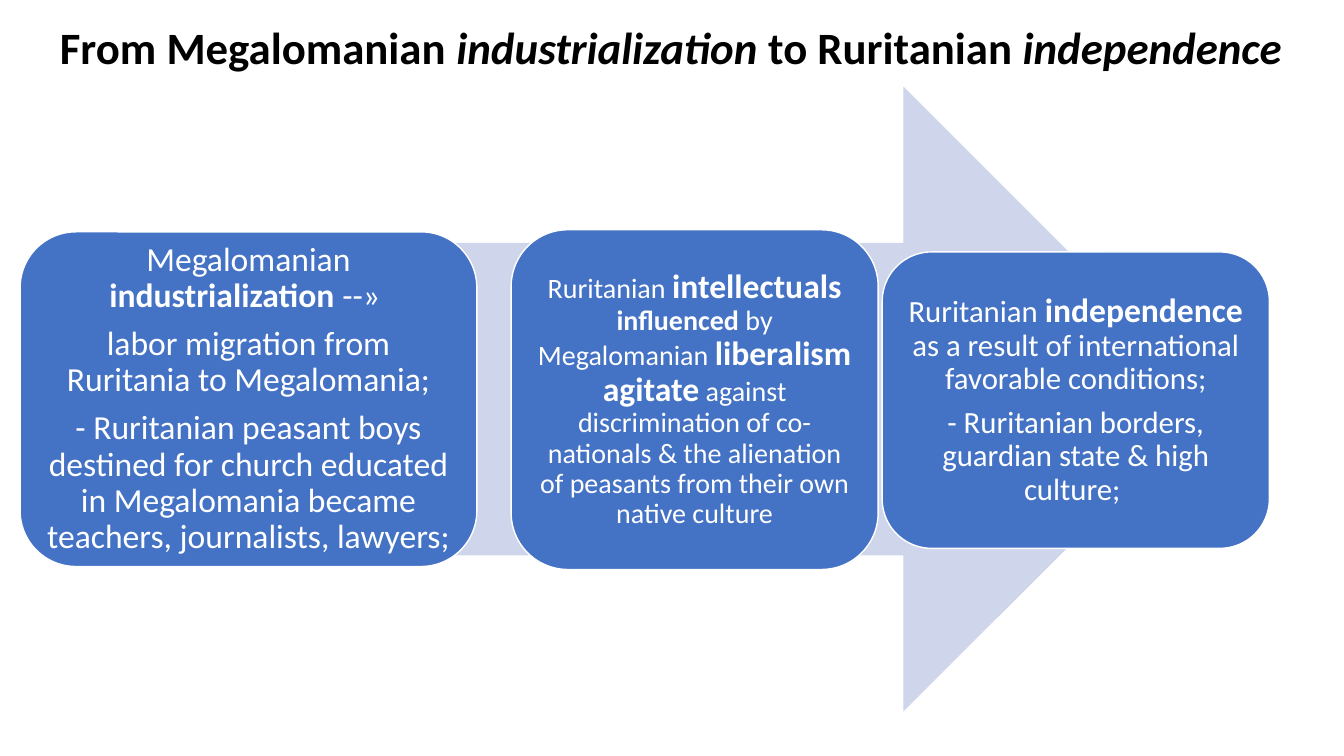
from pptx import Presentation
from pptx.dml.color import RGBColor
from pptx.enum import shapes, text
from pptx.util import Inches, Pt

BLUE, PALE, WHITE, BLACK = "4472C4", "CFD5EA", "FFFFFF", "000000"
FONT = "Calibri"

TITLE = [
    ("From Megalomanian ", 32, "b"),
    ("industrialization", 32, "bi"),
    (" to Ruritanian ", 32, "b"),
    ("independence ", 32, "bi"),
]
STAGES = [
    ((0.2, 2.3, 4.53, 3.32), 0.1, 8.4, [
        [("Megalomanian ", 24, ""), ("industrialization", 24, "b"), (" --» ", 24, "")],
        [("labor migration from Ruritania to Megalomania;", 24, "")],
        [("- Ruritanian peasant boys destined for church educated in "
          "Megalomania became teachers, journalists, lawyers;", 24, "")],
    ]),
    ((5.07, 2.28, 3.64, 3.37), 0.08, 7, [
        [("Ruritanian ", 20, ""), ("intellectuals", 24, "b"), (" ", 20, ""),
         ("influenced", 20, "b"), (" by Megalomanian ", 20, ""),
         ("liberalism", 24, "b"), (" ", 20, ""), ("agitate", 24, "b"),
         (" against discrimination of co-nationals & the alienation of "
          "peasants from their own native culture", 20, "")],
    ]),
    ((8.75, 2.5, 3.84, 2.94), 0.09, 7.7, [
        [("Ruritanian ", 22, ""), ("independence", 24, "b"),
         (" as a result of international favorable conditions;", 22, "")],
        [("- Ruritanian borders, guardian state & high culture; ", 22, "")],
    ]),
]


def rgb(value):
    return RGBColor.from_string(value)


def write(tf, paragraphs, color, after=0):
    tf.word_wrap = True
    tf.vertical_anchor = text.MSO_ANCHOR.MIDDLE
    for i, runs in enumerate(paragraphs):
        p = tf.add_paragraph() if i else tf.paragraphs[0]
        p.alignment = text.PP_ALIGN.CENTER
        p.line_spacing = 0.9
        p.space_after = Pt(after)
        for words, size, style in runs:
            r = p.add_run()
            r.text = words
            r.font.name = FONT
            r.font.size = Pt(size)
            r.font.bold = "b" in style
            r.font.italic = "i" in style
            r.font.color.rgb = rgb(color)


def add_block(s, kind, box, fill):
    sp = s.shapes.add_shape(kind, *map(Inches, box))
    sp.shadow.inherit = False
    sp.fill.solid()
    sp.fill.fore_color.rgb = rgb(fill)
    return sp


def main():
    prs = Presentation()
    prs.slide_width, prs.slide_height = Inches(13.33), Inches(7.5)
    s = prs.slides.add_slide(prs.slide_layouts[5])

    title = s.shapes.title
    title.left, title.top, title.width, title.height = map(Inches, (0.2, 0, 13.01, 1))
    write(title.text_frame, [TITLE], BLACK)

    arrow = add_block(s, shapes.MSO_SHAPE.RIGHT_ARROW, (1.28, 0.86, 10.78, 6.2), PALE)
    arrow.line.fill.background()

    for box, inset, after, paragraphs in STAGES:
        sp = add_block(s, shapes.MSO_SHAPE.ROUNDED_RECTANGLE, box, BLUE)
        sp.line.color.rgb = rgb(WHITE)
        sp.line.width = Pt(1)
        tf = sp.text_frame
        tf.margin_left = tf.margin_right = Inches(inset)
        tf.margin_top = tf.margin_bottom = Inches(inset)
        write(tf, paragraphs, WHITE, after)

    prs.save("out.pptx")


if __name__ == "__main__":
    main()
